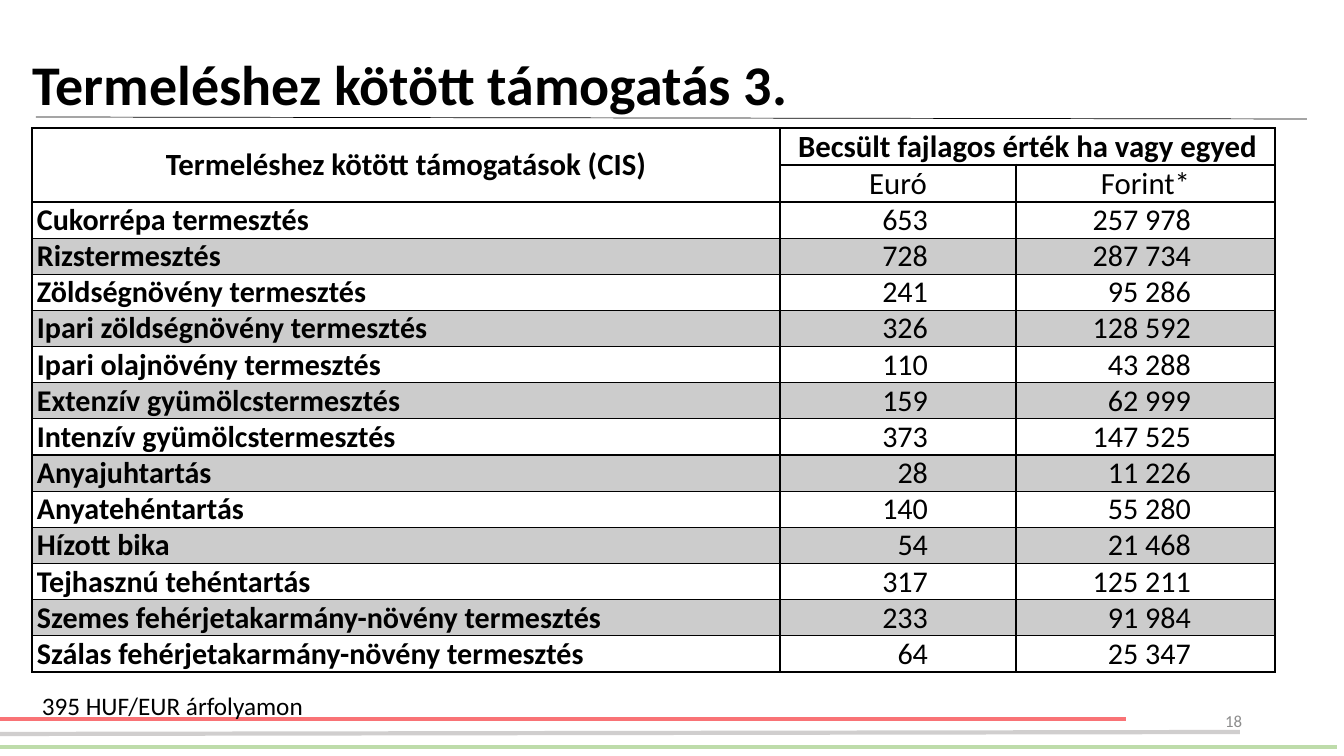
import pptx
import pptx.util
import pptx.dml.color
import pptx.enum.shapes
import pptx.enum.text
import pptx.oxml.ns
from lxml import etree

PX = 914400 / 100.8
FONT = "Calibri"
ALIGN = pptx.enum.text.PP_ALIGN
ANCHOR = pptx.enum.text.MSO_ANCHOR

# Support name, euro, forint
SUPPORTS = [
    ("Cukorrépa termesztés", "653", "257 978"),
    ("Rizstermesztés", "728", "287 734"),
    ("Zöldségnövény termesztés", "241", "95 286"),
    ("Ipari zöldségnövény termesztés", "326", "128 592"),
    ("Ipari olajnövény termesztés", "110", "43 288"),
    ("Extenzív gyümölcstermesztés", "159", "62 999"),
    ("Intenzív gyümölcstermesztés", "373", "147 525"),
    ("Anyajuhtartás", "28", "11 226"),
    ("Anyatehéntartás", "140", "55 280"),
    ("Hízott bika", "54", "21 468"),
    ("Tejhasznú tehéntartás", "317", "125 211"),
    ("Szemes fehérjetakarmány-növény termesztés", "233", "91 984"),
    ("Szálas fehérjetakarmány-növény termesztés", "64", "25 347"),
]
HEADERS = [
    ("Termeléshez kötött támogatások (CIS)",
     "Becsült fajlagos érték ha vagy egyed", ""),
    ("", "Euró", "Forint*"),
]
COLUMN_WIDTHS = (748, 236, 259)
HEADER_HEIGHT, ROW_HEIGHT = 37, 36


def px(length):
    return pptx.util.Emu(round(length * PX))


def color(value):
    return pptx.dml.color.RGBColor.from_string(value)


def add_child(parent, tag, **attributes):
    return etree.SubElement(parent, pptx.oxml.ns.qn(tag), attributes)


def style_text(frame, size, bold=False, align=ALIGN.LEFT, fill="000000"):
    para = frame.paragraphs[0]
    para.alignment = align
    for span in para.runs:
        span.font.name = FONT
        span.font.size = pptx.util.Pt(size)
        span.font.bold = bold
        span.font.color.rgb = color(fill)
    return para


def add_text(page, text, left, top, width, height, size, wrap=True,
             anchor=ANCHOR.MIDDLE, **style):
    box = page.shapes.add_textbox(px(left), px(top), px(width), px(height))
    frame = box.text_frame
    frame.text = text
    frame.word_wrap = wrap
    frame.vertical_anchor = anchor
    return style_text(frame, size, **style)


def add_line(page, x1, y1, x2, y2, stroke, width):
    line = page.shapes.add_connector(
        pptx.enum.shapes.MSO_CONNECTOR.STRAIGHT, px(x1), px(y1), px(x2), px(y2))
    line.line.color.rgb = color(stroke)
    line.line.width = pptx.util.Pt(width)
    add_child(line._element.spPr, "a:effectLst")


def set_borders(cell, bottom):
    properties = cell._tc.get_or_add_tcPr()
    for side, width in (("L", 1), ("R", 1), ("T", 1), ("B", bottom)):
        border = add_child(properties, "a:ln" + side, w=str(pptx.util.Pt(width)))
        fill = add_child(border, "a:solidFill")
        add_child(fill, "a:srgbClr", val="000000")


def set_fill(cell, shaded):
    if not shaded:
        cell.fill.background()
        return
    cell.fill.solid()
    cell.fill.fore_color.rgb = color("000000")
    tint = cell._tc.tcPr.find(".//" + pptx.oxml.ns.qn("a:solidFill") + "[last()]/"
                              + pptx.oxml.ns.qn("a:srgbClr"))
    tint = cell._tc.tcPr[-1][0] if tint is None else cell._tc.tcPr[-1][0]
    add_child(tint, "a:alpha", val="20000")


def fill_cell(cell, text, size, bold, align, anchor, left=5, right=5,
              bottom=1, shaded=False):
    cell.text = text
    cell.vertical_anchor = anchor
    cell.margin_left, cell.margin_right = px(left), px(right)
    cell.margin_top = cell.margin_bottom = 0
    style_text(cell.text_frame, size, bold, align)
    set_borders(cell, bottom)
    set_fill(cell, shaded)


def add_support_table(page, left, top):
    row_count = len(HEADERS) + len(SUPPORTS)
    height = len(HEADERS) * HEADER_HEIGHT + len(SUPPORTS) * ROW_HEIGHT
    table = page.shapes.add_table(
        row_count, len(COLUMN_WIDTHS), px(left), px(top),
        px(sum(COLUMN_WIDTHS)), px(height)).table
    table.first_row = table.horz_banding = False
    for column, width in zip(table.columns, COLUMN_WIDTHS):
        column.width = px(width)
    for index, row in enumerate(table.rows):
        row.height = px(HEADER_HEIGHT if index < len(HEADERS) else ROW_HEIGHT)

    # Two header rows
    for r, texts in enumerate(HEADERS):
        for c, text in enumerate(texts):
            fill_cell(table.cell(r, c), text, 22, r == 0, ALIGN.CENTER,
                      ANCHOR.MIDDLE, bottom=2 if r == 0 else 1)
    table.cell(0, 0).merge(table.cell(1, 0))
    table.cell(0, 1).merge(table.cell(0, 2))

    # One row per support, every second one shaded
    for index, (name, euro, forint) in enumerate(SUPPORTS):
        r, shaded = index + len(HEADERS), index % 2 == 1
        fill_cell(table.cell(r, 0), name, 21.5, True, ALIGN.LEFT,
                  ANCHOR.BOTTOM, shaded=shaded)
        for c, text, right in ((1, euro, 88), (2, forint, 84)):
            fill_cell(table.cell(r, c), text, 21.5, False, ALIGN.RIGHT,
                      ANCHOR.MIDDLE, left=0, right=right, shaded=shaded)


def main():
    deck = pptx.Presentation()
    deck.slide_width, deck.slide_height = px(1344), px(756)
    page = deck.slides.add_slide(deck.slide_layouts[6])

    # Footer stripes and the rule under the title
    add_line(page, 0, 719, 1126, 719, "F97376", 3)
    add_line(page, 0, 747, 1337, 747, "BEDCAA", 3)
    add_line(page, 0, 734, 1240, 732, "D0CECE", 3)
    add_line(page, 36, 117, 1307, 119, "000000", 0.5)

    # Slide number
    add_text(page, "18", 950, 701, 302, 40, 12, align=ALIGN.RIGHT, fill="8C8C8C")

    # Table with its exchange-rate note
    add_support_table(page, 32, 128)
    add_text(page, "395 HUF/EUR árfolyamon", 32, 685, 284, 40, 18,
             wrap=False, anchor=ANCHOR.TOP)

    # Title
    title = add_text(page, "Termeléshez kötött támogatás 3.", 23, 14, 1159, 146,
                     40, bold=True)
    title.line_spacing = 0.9

    deck.save("out.pptx")


if __name__ == "__main__":
    main()
